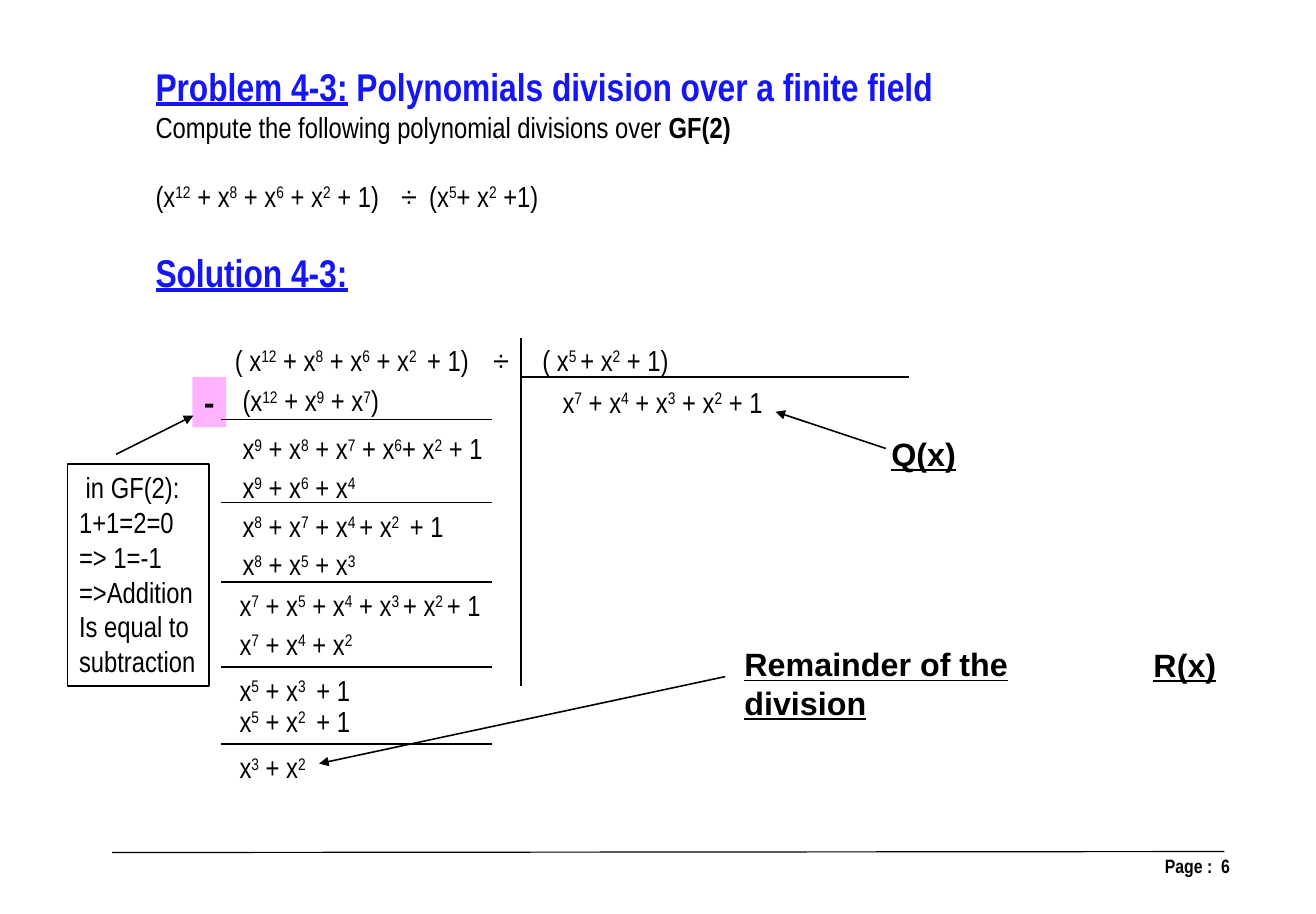
from lxml import etree
from pptx import Presentation
from pptx.dml.color import RGBColor
from pptx.enum.shapes import MSO_CONNECTOR, MSO_SHAPE
from pptx.enum.text import PP_ALIGN
from pptx.oxml.ns import qn
from pptx.util import Inches, Pt

STRAIGHT = MSO_CONNECTOR.STRAIGHT
RECTANGLE = MSO_SHAPE.RECTANGLE
LEFT, RIGHT = PP_ALIGN.LEFT, PP_ALIGN.RIGHT

SLIDE_SIZE = (11.34, 7.88)
CELLS_PER_INCH = 12
BLACK, BLUE, PINK = "000000", "1515F5", "FFB3FF"
NARROW, WIDE = "Arial Narrow", "Arial"

# Styles: font, size, colour, bold, underline. Bars in a text enclose exponents.
STYLES = {
    "heading": (NARROW, 24, BLUE, True, False),
    "heading link": (NARROW, 24, BLUE, True, True),
    "body": (NARROW, 18, BLACK, False, False),
    "strong": (NARROW, 18, BLACK, True, False),
    "label": (WIDE, 20, BLACK, True, True),
    "minus": (WIDE, 20, BLACK, True, False),
    "footer": (NARROW, 12, BLACK, True, False),
}

PROBLEM = [
    [("Problem 4-3:", "heading link"),
     (" Polynomials division over a finite field", "heading")],
    [("Compute the following polynomial divisions over ", "body"), ("GF(2)", "strong")],
    [("(x|12| + x|8| + x|6| + x|2| + 1)\t÷\t(x|5|+ x|2| +1)", "body")],
]
SOLUTION = [[("Solution 4-3:", "heading link")]]
DIVISION = [[("( x|12| + x|8| + x|6| + x|2 | + 1)\t÷\t( x|5 |+ x|2| + 1)", "body")]]
RULE_NOTE = [[(line, "body")] for line in (
    " in GF(2):", "1+1=2=0", "=> 1=-1", "=>Addition", "Is equal to", "subtraction")]

# Steps: left column, top row, polynomial.
STEPS = [
    (23.9, 39, "(x|12| + x|9| + x|7|)"),
    (23.9, 44, "x|9| + x|8| + x|7| + x|6|+ x|2| + 1"),
    (23.9, 48, "x|9| + x|6| + x|4|"),
    (23.9, 52, "x|8| + x|7| + x|4 |+ x|2 | + 1"),
    (23.9, 56, "x|8| + x|5| + x|3|"),
    (23.6, 60.2, "x|7| + x|5| + x|4| + x|3 |+ x|2 |+ 1"),
    (23.6, 64.2, "x|7| + x|4| + x|2|"),
    (23.6, 69, "x|5| + x|3 | + 1"),
    (23.6, 72.2, "x|5| + x|2 | + 1"),
    (23.6, 77, "x|3| + x|2|"),
    (57, 39.2, "x|7| + x|4| + x|3| + x|2| + 1"),
]
LABELS = [
    (75.8, 66.1, "Remainder of the division"),
    (91, 44.3, "Q(x)"),
    (118.1, 66.2, "R(x)"),
]
SUBTRACTION_ROWS = (43.4, 52, 60.2, 69, 77)
DIVIDERS = [((53.9, 35), (53.9, 71)), ((53.9, 39), (94, 39))]
ARROWS = [
    ((75, 70), (33, 79)),
    ((12, 47), (20, 43)),
    ((91.6, 46.4), (80.2, 42.6)),
]


def cells(count):
    return Inches(count / CELLS_PER_INCH)


def color(value):
    return RGBColor.from_string(value)


def add_runs(paragraph, text, style):
    name, size, ink, bold, underline = STYLES[style]
    for index, part in enumerate(text.split("|")):
        if not part:
            continue
        run = paragraph.add_run()
        run.text = part
        font = run.font
        font.name, font.size, font.bold, font.underline = name, Pt(size), bold, underline
        font.color.rgb = color(ink)
        if index % 2:
            run._r.get_or_add_rPr().set("baseline", "30000")


def add_text(slide, box, content, align=LEFT, fill=None, line=None):
    shape = slide.shapes.add_shape(RECTANGLE, *map(cells, box))
    shape.shadow.inherit = False
    for paint, value in ((shape.fill, fill), (shape.line.fill, line)):
        if value:
            paint.solid()
            paint.fore_color.rgb = color(value)
        else:
            paint.background()
    if line:
        shape.line.width = Pt(1)
    frame = shape.text_frame
    frame.word_wrap = True
    frame.vertical_anchor = TOP
    frame.margin_right = 0
    for index, runs in enumerate(content):
        paragraph = frame.add_paragraph() if index else frame.paragraphs[0]
        paragraph.alignment = align
        for text, style in runs:
            add_runs(paragraph, text, style)
    return frame


def add_tabs(paragraph, stops):
    tab_list = etree.SubElement(paragraph._p.get_or_add_pPr(), qn("a:tabLst"))
    for stop in stops:
        etree.SubElement(tab_list, qn("a:tab"), pos=str(cells(stop)), algn="l")


def add_line(slide, start, end, width=1, arrow=False):
    connector = slide.shapes.add_connector(STRAIGHT, *map(cells, start + end))
    connector.line.color.rgb = color(BLACK)
    connector.line.width = Pt(width)
    if arrow:
        etree.SubElement(connector.line._get_or_add_ln(), qn("a:tailEnd"), type="triangle")
    etree.SubElement(connector._element.spPr, qn("a:effectLst"))


def main():
    """Build the slide on polynomial division over GF(2)."""
    presentation = Presentation()
    presentation.slide_width, presentation.slide_height = map(Inches, SLIDE_SIZE)
    slide = presentation.slides.add_slide(presentation.slide_layouts[6])

    add_line(slide, (11.6, 88.2), (126.6, 88.1), width=0.75)
    add_text(slide, (97.7, 87.8, 29.5, 4), [[("Page :  6", "footer")]], RIGHT)

    exercise = add_text(slide, (14.9, 5.9, 116, 17), PROBLEM).paragraphs[-1]
    exercise.space_before = Pt(21.5)
    add_tabs(exercise, (25.4, 28.3))
    add_text(slide, (14.9, 25.2, 86, 6), SOLUTION)
    division = add_text(slide, (23.1, 34.8, 50, 5), DIVISION)
    add_tabs(division.paragraphs[0], (26.7, 31.8))

    add_text(slide, (19.9, 39, 3.5, 5.2), [[("-", "minus")]], fill=PINK)
    add_text(slide, (7, 48, 14.6, 23), RULE_NOTE, line=BLACK)
    for left, top, text in STEPS:
        add_text(slide, (left, top, 30, 4.9), [[(text, "body")]])
    for left, top, text in LABELS:
        add_text(slide, (left, top, 36, 5.2), [[(text, "label")]])

    for start, end in DIVIDERS:
        add_line(slide, start, end)
    for row in SUBTRACTION_ROWS:
        add_line(slide, (22.9, row), (50.9, row))
    for start, end in ARROWS:
        add_line(slide, start, end, arrow=True)
    presentation.save("out.pptx")


from pptx.enum.text import MSO_ANCHOR

TOP = MSO_ANCHOR.TOP

if __name__ == "__main__":
    main()
